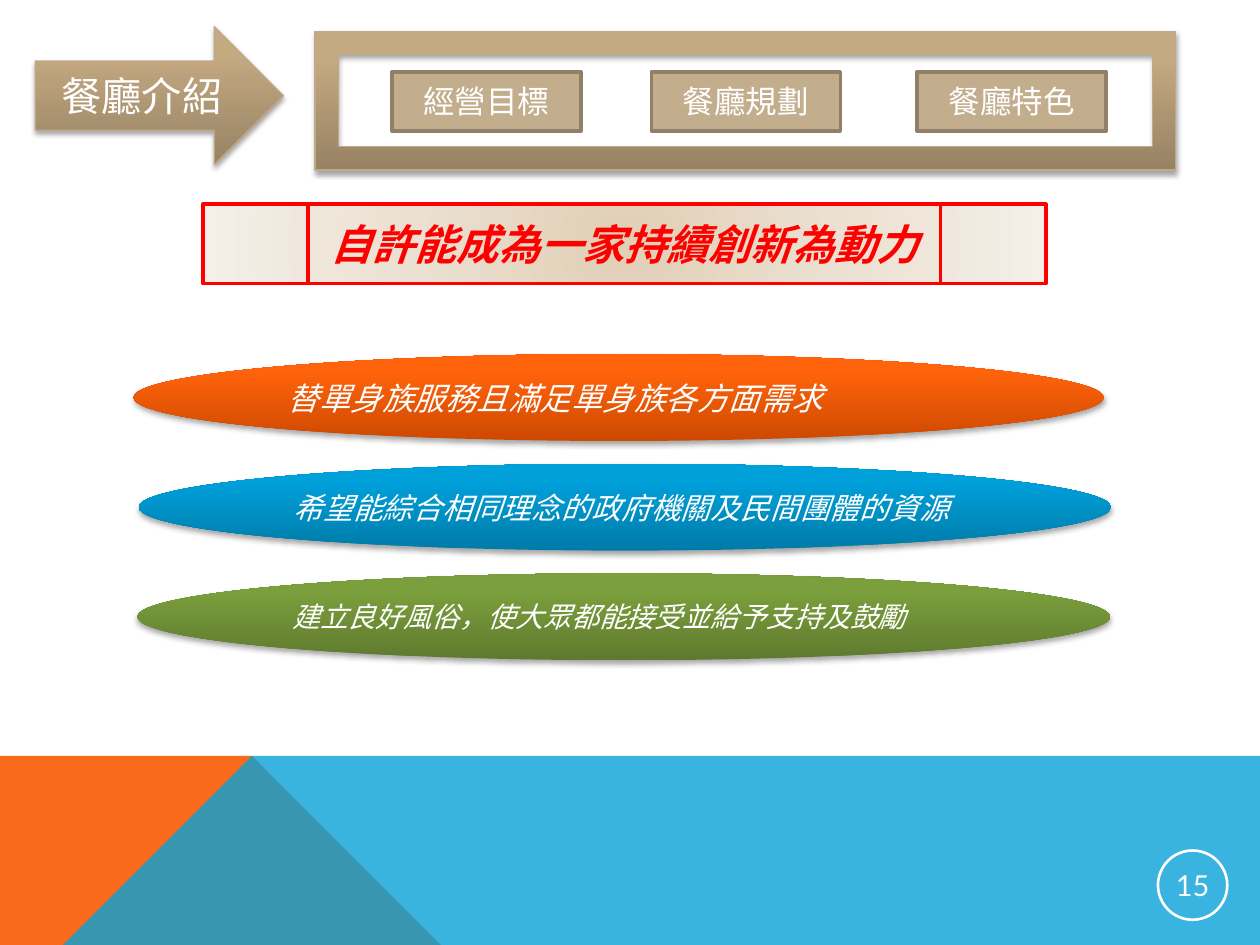
from lxml import etree
from pptx import Presentation
from pptx.dml.color import RGBColor
from pptx.enum.shapes import MSO_SHAPE
from pptx.enum.text import MSO_ANCHOR, PP_ALIGN
from pptx.oxml.ns import qn
from pptx.util import Inches, Pt

ARROW, FRAME, RECT = MSO_SHAPE.RIGHT_ARROW, MSO_SHAPE.FRAME, MSO_SHAPE.RECTANGLE
OVAL, PROCESS = MSO_SHAPE.OVAL, MSO_SHAPE.FLOWCHART_PREDEFINED_PROCESS
LEFT, CENTER, MIDDLE = PP_ALIGN.LEFT, PP_ALIGN.CENTER, MSO_ANCHOR.MIDDLE

LATIN, CJK = "Lato", "Noto Sans CJK JP"
WHITE, RED, TAN_LINE = "FFFFFF", "FF0000", "BFA989"
# Gradients run through stops at these positions
LINEAR_STOPS, RADIAL_STOPS = (0, 80, 100), (0, 50, 100)
TAN = ("978263", "C4A981", "C6AA80")
CREAM = ("E1CFB6", "EBE0D1", "F5EFE8")
ORANGE = ("CE4900", "FF630C", "FF640E")
BLUE = ("007BA8", "00A0DA", "00A0DB")
GREEN = ("5F7A2E", "7B9F3C", "7CA13B")


def color(value):
    return RGBColor.from_string(value)


def add_node(parent, tag, **attributes):
    return etree.SubElement(parent, qn(tag), {k: str(v) for k, v in attributes.items()})


class SlideBuilder:
    def __init__(self, deck):
        self.page = deck.slides.add_slide(deck.slide_layouts[6])

    def style(self, shape, fill=None, line=None, weight=0.75):
        shape.shadow.inherit = False
        if fill:
            shape.fill.solid()
            shape.fill.fore_color.rgb = color(fill)
        else:
            shape.fill.background()
        if line:
            shape.line.color.rgb = color(line)
            shape.line.width = Pt(weight)
        else:
            shape.line.fill.background()

    def shape(self, kind, left, top, width, height, **look):
        box = self.page.shapes.add_shape(
            kind, Inches(left), Inches(top), Inches(width), Inches(height))
        self.style(box, **look)
        return box

    def polygon(self, points, fill, opacity=100):
        builder = self.page.shapes.build_freeform(*points[0], scale=Inches(1))
        builder.add_line_segments(points[1:], close=True)
        area = builder.convert_to_shape()
        self.style(area, fill)
        if opacity < 100:
            tint = area._element.spPr.find(qn("a:solidFill"))[0]
            add_node(tint, "a:alpha", val=opacity * 1000)

    def gradient(self, shape, colors, radial=False):
        properties = shape._element.spPr
        blend = etree.Element(qn("a:gradFill"), rotWithShape="1")
        stops = add_node(blend, "a:gsLst")
        for position, value in zip(RADIAL_STOPS if radial else LINEAR_STOPS, colors):
            stop = add_node(stops, "a:gs", pos=position * 1000)
            add_node(stop, "a:srgbClr", val=value)
        if radial:
            circle = add_node(blend, "a:path", path="circle")
            add_node(circle, "a:fillToRect", l=50000, t=50000, r=50000, b=50000)
        else:
            add_node(blend, "a:lin", ang=270 * 60000, scaled=0)
        properties.replace(properties.find(qn("a:noFill")), blend)

    def shadow(self, shape):
        effects = shape._element.spPr.find(qn("a:effectLst"))
        drop = add_node(effects, "a:outerShdw", blurRad=int(Pt(3.1)), dist=int(Pt(1.8)),
                        dir=90 * 60000, rotWithShape=0)
        tint = add_node(drop, "a:srgbClr", val="000000")
        add_node(tint, "a:alpha", val=35000)

    def text(self, shape, words, size, name=LATIN, ink=WHITE, align=CENTER, **font):
        frame = shape.text_frame
        frame.word_wrap = True
        frame.vertical_anchor = MIDDLE
        para = frame.paragraphs[0]
        para.alignment = align
        span = para.add_run()
        span.text = words
        for key, value in {"size": Pt(size), "name": name, **font}.items():
            setattr(span.font, key, value)
        span.font.color.rgb = color(ink)
        add_node(span._r.get_or_add_rPr(), "a:ea", typeface=name)


def main():
    deck = Presentation()
    deck.slide_width, deck.slide_height = Inches(10), Inches(7.5)
    slide = SlideBuilder(deck)

    # Bottom band
    slide.polygon([(0, 7.5), (0, 5.52), (2.23, 5.52), (3.91, 7.5)], "F96A1B")
    slide.polygon([(0, 7.5), (2.23, 5.52), (10, 5.52), (10, 7.5)], "08A1D9", 80)

    # Slide number
    badge = slide.shape(OVAL, 9.19, 6.75, 0.55, 0.55, line=WHITE, weight=1.5)
    for side in ("left", "top", "right", "bottom"):
        setattr(badge.text_frame, f"margin_{side}", Inches(0.01))
    slide.text(badge, "15", 16.5)

    # Section arrow and menu frame
    arrow = slide.shape(ARROW, 0.28, 0.21, 1.97, 1.1, line=TAN_LINE)
    menu = slide.shape(FRAME, 2.5, 0.25, 6.83, 1.1, line=TAN_LINE)
    menu.adjustments[0] = 0.168
    for shape in (arrow, menu):
        slide.gradient(shape, TAN)
        slide.shadow(shape)
    slide.text(arrow, "餐廳介紹", 23, CJK)

    # Menu entries
    for left, label in ((3.11, "經營目標"), (5.17, "餐廳規劃"), (7.28, "餐廳特色")):
        entry = slide.shape(RECT, left, 0.57, 1.5, 0.47,
                            fill="C2AD8D", line="908068", weight=2)
        slide.text(entry, label, 18, CJK)

    # Headline
    headline = slide.shape(PROCESS, 1.61, 1.62, 6.69, 0.63, line=RED, weight=2)
    slide.gradient(headline, CREAM, radial=True)
    slide.text(headline, "自許能成為一家持續創新為動力", 24, ink=RED, bold=True, italic=True)

    # Goals, evenly stacked
    goals = (
        (1.06, 7.7, ORANGE, 18, "替單身族服務且滿足單身族各方面需求"),
        (1.1, 7.72, BLUE, 17, "希望能綜合相同理念的政府機關及民間團體的資源"),
        (1.09, 7.72, GREEN, 16, "建立良好風俗，使大眾都能接受並給予支持及鼓勵"),
    )
    for row, (left, width, colors, size, words) in enumerate(goals):
        goal = slide.shape(OVAL, left, 2.81 + row * 0.87, width, 0.69)
        slide.gradient(goal, colors)
        slide.shadow(goal)
        slide.text(goal, words, size, align=LEFT, italic=True)

    deck.save("out.pptx")


if __name__ == "__main__":
    main()
